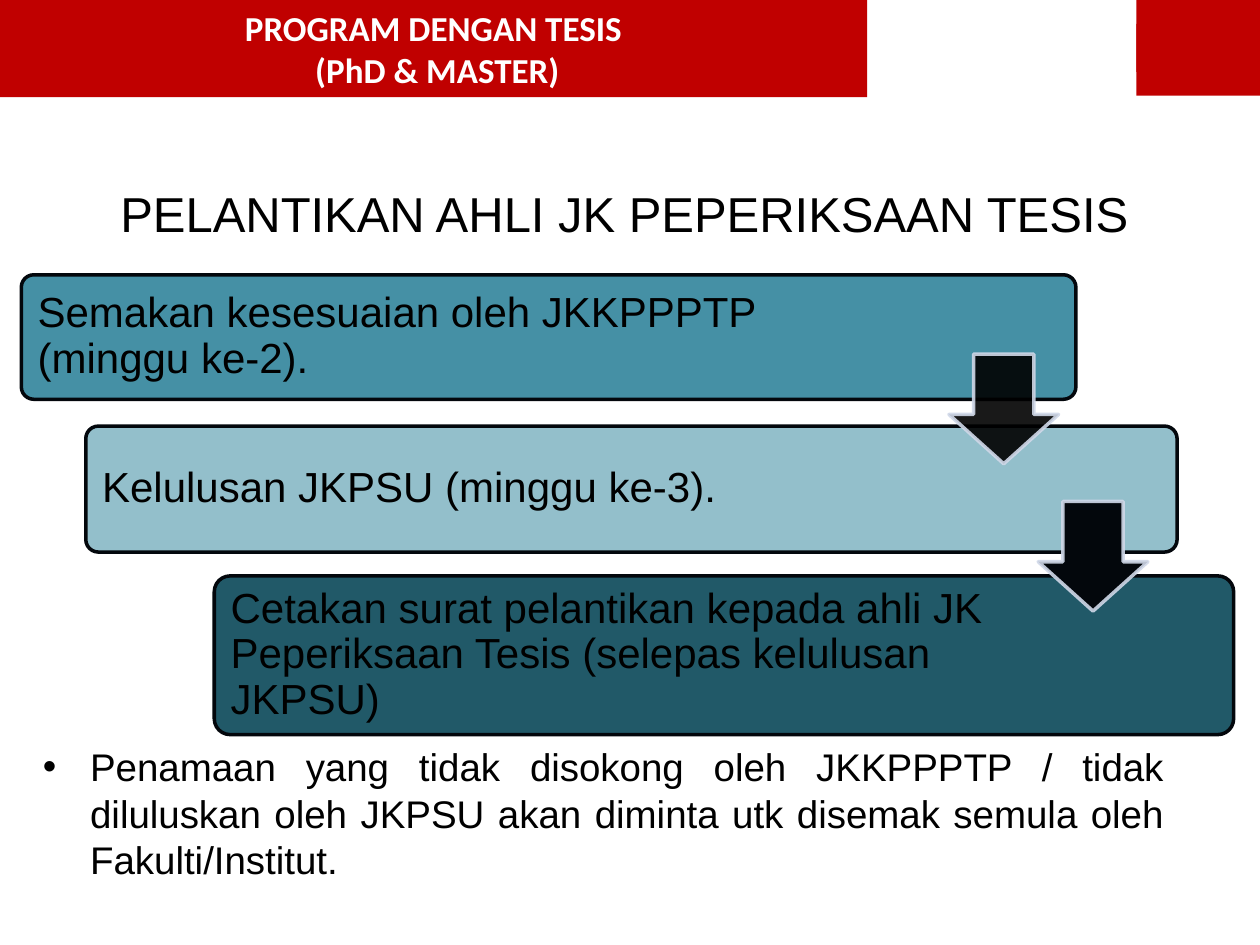
from lxml.etree import SubElement
from pptx import Presentation
from pptx.dml.color import RGBColor
from pptx.enum.shapes import MSO_SHAPE as Preset
from pptx.enum.text import MSO_ANCHOR as Anchor, MSO_AUTO_SIZE as AutoSize, PP_ALIGN as Align
from pptx.oxml.ns import qn
from pptx.util import Cm, Pt

COLORS = {
    "red": "C00000",
    "teal": "31859C",
    "dark_teal": "215968",
    "outline": "03070C",
    "arrow_edge": "D0D8E8",
    "bullet": "C4BD97",
    "black": "000000",
    "white": "FFFFFF",
}

# box (left, top, width, height), text width, fill, opacity in percent, wording
STEPS = [
    ((0.43, 5.54, 21.26, 2.51), 17.53, "teal", 90,
     "Semakan kesesuaian oleh JKKPPPTP (minggu ke-2)."),
    ((1.73, 8.59, 22, 2.54), 17.55, "teal", 52,
     "Kelulusan JKPSU (minggu ke-3)."),
    ((4.32, 11.61, 20.55, 3.2), 16.33, "dark_teal", 100,
     "Cetakan surat pelantikan kepada ahli JK Peperiksaan Tesis (selepas kelulusan JKPSU)"),
]
# left, top, fill, opacity in percent
ARROWS = [(19.13, 7.14, "black", 90), (20.93, 10.11, "outline", 100)]
ARROW_SIZE = 2.21
TEXT_OFFSET = 0.08


def color(name):
    return RGBColor.from_string(COLORS[name])


def set_opacity(shape, fill_path, percent):
    if percent < 100:
        for node in shape._element.xpath(f"./p:spPr/{fill_path}/a:srgbClr"):
            SubElement(node, qn("a:alpha")).set("val", str(percent * 1000))


class SlideBuilder:
    def __init__(self, slide, font="Arial"):
        self.slide = slide
        self.font = font

    def format_text(self, text_frame, size, ink="black", font=None, bold=False, align=Align.LEFT):
        text_frame.word_wrap = True
        for paragraph in text_frame.paragraphs:
            paragraph.alignment = align
            for run in paragraph.runs:
                run.font.name = font or self.font
                run.font.size = Pt(size)
                run.font.bold = bold
                run.font.color.rgb = color(ink)

    def fill_placeholder(self, placeholder, box, text, size, align):
        placeholder.left, placeholder.top, placeholder.width, placeholder.height = map(Cm, box)
        text_frame = placeholder.text_frame
        text_frame.text = text
        text_frame.auto_size = AutoSize.NONE
        self.format_text(text_frame, size, align=align)
        return text_frame

    def title(self, box, text):
        text_frame = self.fill_placeholder(self.slide.shapes.title, box, text, 28, Align.CENTER)
        text_frame.vertical_anchor = Anchor.MIDDLE

    def bullet_note(self, box, text):
        body = self.slide.placeholders[1]
        paragraph = body.text_frame.paragraphs[0]
        properties = paragraph._p.get_or_add_pPr()
        properties.set("marL", str(Cm(0.95)))
        properties.set("indent", str(-Cm(0.95)))
        bullet_color = SubElement(properties, qn("a:buClr"))
        SubElement(bullet_color, qn("a:srgbClr")).set("val", COLORS["bullet"])
        SubElement(properties, qn("a:buSzPct")).set("val", "120000")
        SubElement(properties, qn("a:buFont")).set("typeface", self.font)
        SubElement(properties, qn("a:buChar")).set("char", "❑")
        paragraph.line_spacing = 0.8
        paragraph.space_before = Pt(0)
        self.fill_placeholder(body, box, text, 22, Align.JUSTIFY)

    def shape(self, preset, box, fill, opacity=100, line=None, line_opacity=100, adjustments=()):
        shape = self.slide.shapes.add_shape(preset, *map(Cm, box))
        shape.shadow.inherit = False
        shape.fill.solid()
        shape.fill.fore_color.rgb = color(fill)
        set_opacity(shape, "a:solidFill", opacity)
        if line:
            shape.line.color.rgb = color(line)
            shape.line.width = Pt(2)
            set_opacity(shape, "a:ln/a:solidFill", line_opacity)
        else:
            shape.line.fill.background()
        for index, value in enumerate(adjustments):
            shape.adjustments[index] = value
        return shape

    def step(self, box, text_width, fill, opacity, text):
        self.shape(Preset.ROUNDED_RECTANGLE, box, fill, opacity, "outline", adjustments=[0.1])
        left, top, _, height = box
        label = self.slide.shapes.add_textbox(
            Cm(left + TEXT_OFFSET), Cm(top + TEXT_OFFSET),
            Cm(text_width), Cm(height - 2 * TEXT_OFFSET))
        text_frame = label.text_frame
        text_frame.text = text
        text_frame.vertical_anchor = Anchor.MIDDLE
        text_frame.margin_left = text_frame.margin_right = Cm(0.25)
        text_frame.margin_top = text_frame.margin_bottom = Cm(0.25)
        text_frame.paragraphs[0].line_spacing = 0.9
        self.format_text(text_frame, 24)

    def arrow(self, left, top, fill, opacity):
        self.shape(Preset.DOWN_ARROW, (left, top, ARROW_SIZE, ARROW_SIZE), fill, opacity,
                   "arrow_edge", 90, [0.55, 0.45])

    def header(self, box, text):
        text_frame = self.shape(Preset.RECTANGLE, box, "red").text_frame
        text_frame.text = text
        text_frame.vertical_anchor = Anchor.TOP
        self.format_text(text_frame, 20, "white", "Calibri", True, Align.CENTER)


def main():
    presentation = Presentation()
    presentation.slide_width, presentation.slide_height = Cm(25.4), Cm(19.05)
    builder = SlideBuilder(presentation.slides.add_slide(presentation.slide_layouts[1]))

    builder.title((0.61, 3.28, 23.95, 2.01), "PELANTIKAN AHLI JK PEPERIKSAAN TESIS")
    builder.bullet_note(
        (0.61, 14.86, 23.11, 3.4),
        "Penamaan yang tidak disokong oleh JKKPPPTP / tidak diluluskan oleh JKPSU "
        "akan diminta utk disemak semula oleh Fakulti/Institut.")
    for step in STEPS:
        builder.step(*step)
    for arrow in ARROWS:
        builder.arrow(*arrow)
    builder.header((0, 0, 17.48, 1.96), "PROGRAM DENGAN TESIS\n (PhD & MASTER)")
    for top in (0, 0.48):
        builder.shape(Preset.RECTANGLE, (22.91, top, 2.49, 1.45), "red")

    presentation.save("out.pptx")


if __name__ == "__main__":
    main()
